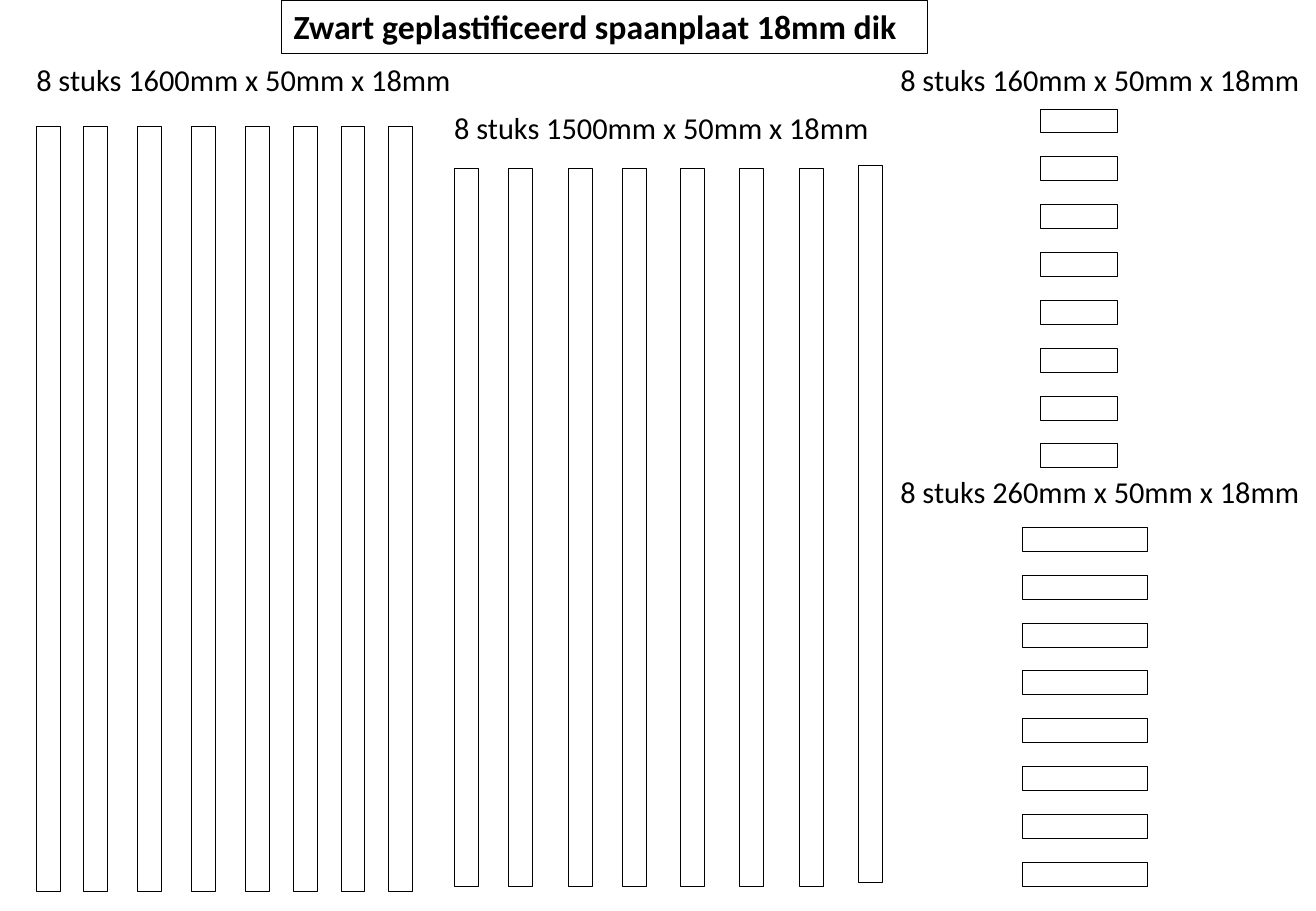
from pptx import Presentation
from pptx import util as u
from pptx.dml import color
from pptx.enum import shapes, text

Pt = u.Pt


def rgb(value):
    return color.RGBColor.from_string(value)


def write(sp, content, size=18, bold=False, wrap=False, ink="000000", font="Calibri"):
    tf = sp.text_frame
    tf.word_wrap = wrap
    tf.auto_size = text.MSO_AUTO_SIZE.SHAPE_TO_FIT_TEXT
    tf.vertical_anchor = text.MSO_ANCHOR.TOP
    p = tf.paragraphs[0]
    p.alignment = text.PP_ALIGN.LEFT
    r = p.add_run()
    r.text = content
    r.font.name = font
    r.font.size = Pt(size)
    r.font.bold = bold
    r.font.color.rgb = rgb(ink)


class Sheet:
    line = "000000"
    weight = 0.5

    def __init__(self, s):
        self.s = s

    def box(self, x, y, w, h):
        sp = self.s.shapes.add_shape(shapes.MSO_SHAPE.RECTANGLE, Pt(x), Pt(y), Pt(w), Pt(h))
        sp.shadow.inherit = False
        sp.fill.background()
        sp.line.color.rgb = rgb(self.line)
        sp.line.width = Pt(self.weight)
        return sp

    def label(self, x, y, w, content):
        sp = self.s.shapes.add_textbox(Pt(x), Pt(y), Pt(w), Pt(29))
        write(sp, content)

    def title(self, x, y, w, h, content):
        write(self.box(x, y, w, h), content, size=20, bold=True, wrap=True)

    def stack(self, x, y, w, count=8, pitch=28.36):
        for i in range(count):
            self.box(x, y + i * pitch, w, PLANK)

    def planks(self, lefts, y, h):
        for x in lefts:
            self.box(x, y, PLANK, h)


PLANK = 14.2
LONG_LEFTS = [21.6, 49.7, 81.4, 113.6, 145.4, 173.7, 202.1, 230.4]
SHORT_LEFTS = [269.3, 301.5, 337, 368.8, 403.2, 438.5, 473.6]


def main():
    prs = Presentation()
    prs.slide_width = Pt(780)
    prs.slide_height = Pt(540)
    sheet = Sheet(prs.slides.add_slide(prs.slide_layouts[6]))

    sheet.planks(LONG_LEFTS, 74.9, 453.6)
    sheet.planks(SHORT_LEFTS, 100, 425.2)
    sheet.planks([508.6], 97.8, 425.2)
    sheet.stack(617, 64.6, 45.4)
    sheet.stack(606.2, 312.6, 73.7)

    sheet.title(167, 0, 383, 31.5, "Zwart geplastificeerd spaanplaat 18mm dik")
    for x, y, w, length in [
        (14.4, 32.4, 262.8, 1600),
        (262.1, 61.2, 267.1, 1500),
        (526.5, 32.4, 253.4, 160),
        (526.5, 277.2, 253.4, 260),
    ]:
        sheet.label(x, y, w, f"8 stuks {length}mm x 50mm x 18mm")

    prs.save("out.pptx")


if __name__ == "__main__":
    main()
